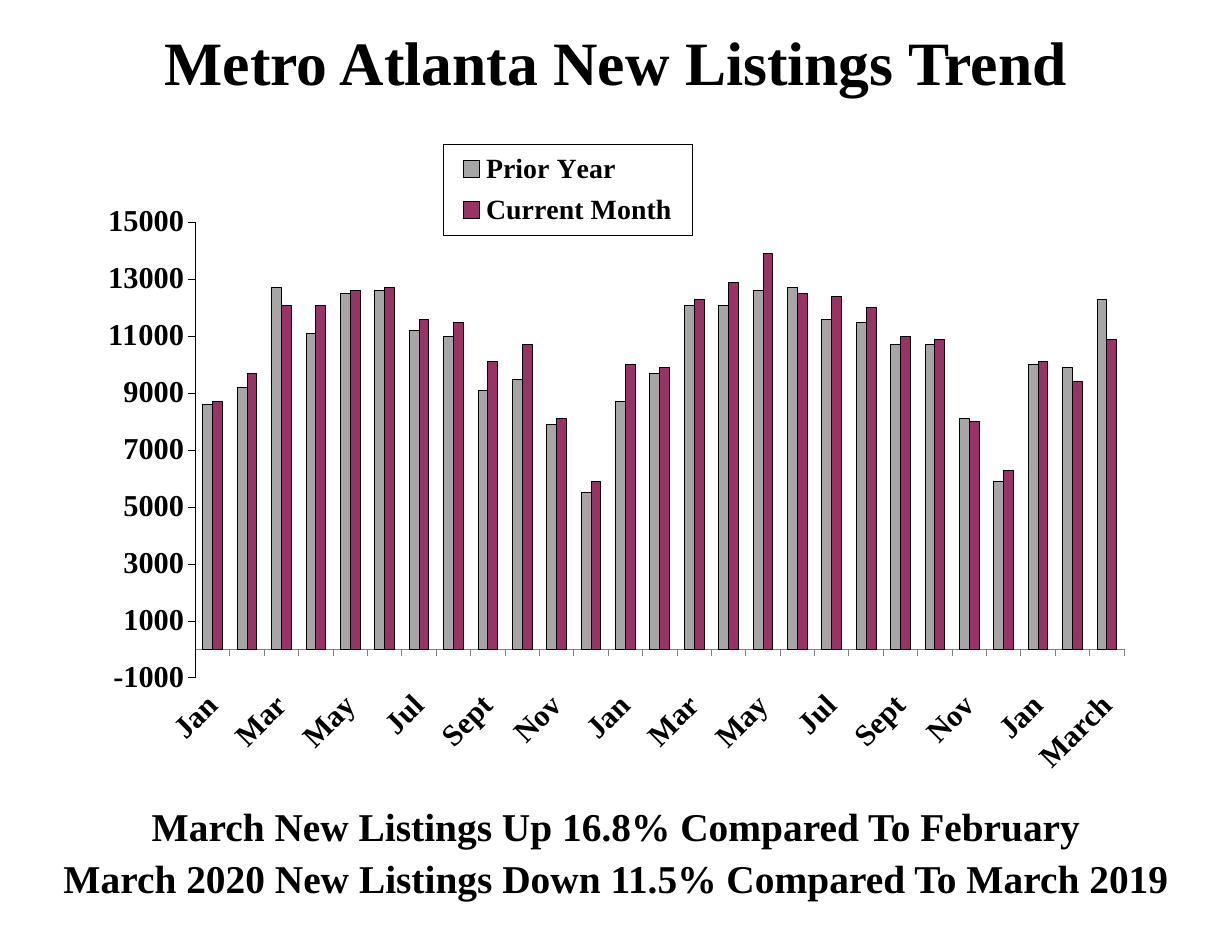
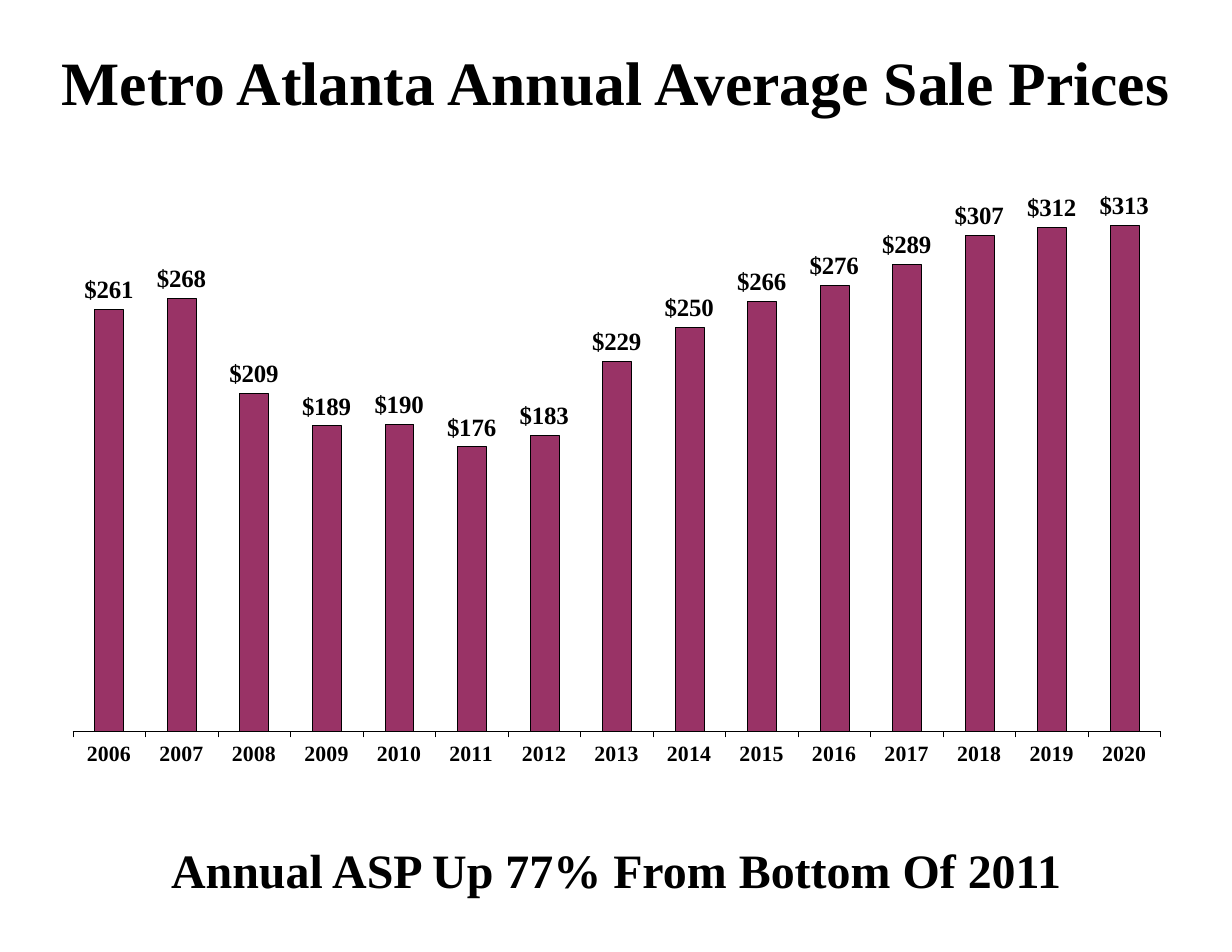
from dataclasses import dataclass
from typing import Any

import lxml.etree
import pptx
import pptx.chart.chart
import pptx.chart.data
import pptx.dml.color
import pptx.dml.line
import pptx.enum.chart
import pptx.enum.text
import pptx.oxml
import pptx.oxml.ns
import pptx.slide
import pptx.util

Cm = pptx.util.Cm
Pt = pptx.util.Pt
qn = pptx.oxml.ns.qn

BLACK = pptx.dml.color.RGBColor(0x00, 0x00, 0x00)
AXIS_GREY = pptx.dml.color.RGBColor(0x80, 0x80, 0x80)
PRIOR_GREY = pptx.dml.color.RGBColor(0xA6, 0xA6, 0xA6)
PLUM = pptx.dml.color.RGBColor(0x99, 0x33, 0x66)

FONT_FORMAT = {"name": "Times New Roman", "bold": True}
PAGE_WIDTH, PAGE_HEIGHT = 27.94, 21.59
TITLE_SIZE = 39.6

MONTHS = ["Jan", "Feb", "Mar", "Apr", "May", "Jun",
          "Jul", "Aug", "Sept", "Oct", "Nov", "Dec"]
LISTING_MONTHS = MONTHS * 2 + ["Jan", "Feb", "March"]
PRIOR_LISTINGS = [
    8600, 9200, 12700, 11100, 12500, 12600, 11200, 11000, 9100, 9500, 7900, 5500,
    8700, 9700, 12100, 12100, 12600, 12700, 11600, 11500, 10700, 10700, 8100, 5900,
    10000, 9900, 12300]
CURRENT_LISTINGS = [
    8700, 9700, 12100, 12100, 12600, 12700, 11600, 11500, 10100, 10700, 8100, 5900,
    10000, 9900, 12300, 12900, 13900, 12500, 12400, 12000, 11000, 10900, 8000, 6300,
    10100, 9400, 10900]
SALE_YEARS = [str(year) for year in range(2006, 2021)]
SALE_PRICES = [261, 268, 209, 189, 190, 176, 183, 229, 250, 266, 276, 289, 307, 312, 313]


@dataclass(frozen=True)
class Box:
    """Left, top, width and height in centimetres."""
    left: float
    top: float
    width: float
    height: float

    def lengths(self) -> list[pptx.util.Length]:
        return [Cm(side) for side in (self.left, self.top, self.width, self.height)]


@dataclass(frozen=True)
class Series:
    name: str
    values: list[int]
    color: pptx.dml.color.RGBColor


@dataclass(frozen=True)
class ColumnChart:
    box: Box
    plot_area: tuple[float, float, float, float]
    categories: list[str]
    series: list[Series]
    label_size: float
    axis_color: pptx.dml.color.RGBColor
    value_scale: dict[str, float]


@dataclass(frozen=True)
class Text:
    box: Box
    lines: list[str]
    size: float
    line_format: dict[str, Any]
    frame_format: dict[str, Any]


def apply_format(target: Any, *formats: dict[str, Any]) -> None:
    for values in formats:
        for attribute, value in values.items():
            setattr(target, attribute, value)


def style_font(font: Any, size: float) -> None:
    apply_format(font, FONT_FORMAT, {"size": Pt(size)})
    font.color.rgb = BLACK


def style_line(line: pptx.dml.line.LineFormat, color: pptx.dml.color.RGBColor) -> None:
    line.color.rgb = color
    line.width = Pt(0.03)


def title(text: str, top: float) -> Text:
    return Text(Box(0, top, PAGE_WIDTH, 1.17), [text], TITLE_SIZE, {},
                {"vertical_anchor": pptx.enum.text.MSO_ANCHOR.MIDDLE})


def caption(box: Box, lines: list[str], size: float) -> Text:
    return Text(box, lines, size, {"line_spacing": 0.9},
                {"margin_top": Cm(0.73), "margin_left": 0, "margin_right": 0})


def add_text(slide: pptx.slide.Slide, text: Text) -> None:
    frame = slide.shapes.add_textbox(*text.box.lengths()).text_frame
    apply_format(frame, {"word_wrap": True}, text.frame_format)
    for number, line in enumerate(text.lines):
        paragraph = frame.add_paragraph() if number else frame.paragraphs[0]
        apply_format(paragraph, {"alignment": pptx.enum.text.PP_ALIGN.CENTER},
                     text.line_format)
        if number:
            paragraph.space_before = Pt(6)
        run = paragraph.add_run()
        run.text = line
        style_font(run.font, text.size)


def manual_layout(fractions: tuple[float, ...], inner: bool = False) -> lxml.etree._Element:
    """Place a chart part by fractions of the chart: left, top, width, height."""
    layout = lxml.etree.Element(qn("c:layout"))
    manual = lxml.etree.SubElement(layout, qn("c:manualLayout"))
    settings = [("layoutTarget", "inner")] if inner else []
    settings += [("xMode", "edge"), ("yMode", "edge")]
    settings += zip("xywh", map(str, fractions))
    for tag, value in settings:
        lxml.etree.SubElement(manual, qn(f"c:{tag}"), val=value)
    return layout


def add_column_chart(slide: pptx.slide.Slide, spec_: ColumnChart) -> pptx.chart.chart.Chart:
    data = pptx.chart.data.CategoryChartData()
    data.categories = spec_.categories
    for series in spec_.series:
        data.add_series(series.name, series.values)
    chart = slide.shapes.add_chart(
        pptx.enum.chart.XL_CHART_TYPE.COLUMN_CLUSTERED, *spec_.box.lengths(), data).chart
    apply_format(chart, {"has_title": False, "has_legend": False})
    style_font(chart.font, spec_.label_size)

    plot = chart.plots[0]
    apply_format(plot, {"gap_width": 150, "overlap": 0, "vary_by_categories": False})
    for drawn, series in zip(plot.series, spec_.series):
        drawn.invert_if_negative = False
        drawn.format.fill.solid()
        drawn.format.fill.fore_color.rgb = series.color
        style_line(drawn.format.line, BLACK)

    months_or_years = chart.category_axis
    apply_format(months_or_years, {
        "major_tick_mark": pptx.enum.chart.XL_TICK_MARK.OUTSIDE,
        "tick_label_position": pptx.enum.chart.XL_TICK_LABEL_POSITION.LOW,
        "has_major_gridlines": False})
    style_font(months_or_years.tick_labels.font, spec_.label_size)
    style_line(months_or_years.format.line, spec_.axis_color)
    apply_format(chart.value_axis, {"has_major_gridlines": False}, spec_.value_scale)

    plot_area = chart._chartSpace.chart.plotArea
    for automatic in plot_area.findall(qn("c:layout")):
        plot_area.remove(automatic)
    plot_area.insert(0, manual_layout(spec_.plot_area, inner=True))
    return chart


def slant_alternate_labels(chart: pptx.chart.chart.Chart) -> None:
    axis = chart.category_axis._element
    axis.find(qn("c:txPr")).find(qn("a:bodyPr")).set("rot", "-2700000")
    skip = lxml.etree.Element(qn("c:tickLblSkip"), val="2")
    axis.find(qn("c:noMultiLvlLbl")).addprevious(skip)


def add_framed_legend(chart: pptx.chart.chart.Chart) -> None:
    chart.has_legend = True
    legend = chart.legend
    apply_format(legend, {"position": pptx.enum.chart.XL_LEGEND_POSITION.RIGHT,
                          "include_in_layout": False})
    style_font(legend.font, 17.9)
    element = legend._element
    for automatic in element.findall(qn("c:layout")):
        element.remove(automatic)
    element.find(qn("c:legendPos")).addnext(manual_layout((0.34, 0.02, 0.23, 0.14)))
    element.find(qn("c:overlay")).addnext(pptx.oxml.parse_xml(
        f'<c:spPr {pptx.oxml.ns.nsdecls("c", "a")}><a:ln w="3175"><a:solidFill>'
        f'<a:srgbClr val="{BLACK}"/></a:solidFill></a:ln></c:spPr>'))


def add_price_labels(chart: pptx.chart.chart.Chart) -> None:
    plot = chart.plots[0]
    plot.has_data_labels = True
    apply_format(plot.data_labels, {
        "show_value": True, "number_format": r"\$#,##0", "number_format_is_linked": False,
        "position": pptx.enum.chart.XL_LABEL_POSITION.OUTSIDE_END})
    style_font(plot.data_labels.font, 16)


def build_listings(slide: pptx.slide.Slide) -> None:
    add_text(slide, caption(
        Box(0, 17.58, PAGE_WIDTH, 1.63),
        ["March New Listings Up 16.8% Compared To February",
         "March 2020 New Listings Down 11.5% Compared To March 2019"], 25.3))
    chart = add_column_chart(slide, ColumnChart(
        Box(1.73, 2.97, 24.49, 14.76), (0.11, 0.14, 0.86, 0.7), LISTING_MONTHS,
        [Series("Prior Year", PRIOR_LISTINGS, PRIOR_GREY),
         Series("Current Month", CURRENT_LISTINGS, PLUM)],
        19.5, AXIS_GREY,
        {"minimum_scale": -1000, "maximum_scale": 15000, "major_unit": 2000,
         "major_tick_mark": pptx.enum.chart.XL_TICK_MARK.OUTSIDE}))
    style_font(chart.value_axis.tick_labels.font, 19.5)
    style_line(chart.value_axis.format.line, BLACK)
    slant_alternate_labels(chart)
    add_framed_legend(chart)
    add_text(slide, title("Metro Atlanta New Listings Trend", 0.79))


def build_sale_prices(slide: pptx.slide.Slide) -> None:
    add_text(slide, caption(Box(0.71, 18.49, 26.54, 1.63),
                            ["Annual ASP Up 77% From Bottom Of 2011"], 30.8))
    chart = add_column_chart(slide, ColumnChart(
        Box(1.4, 2.29, 24.92, 16.23), (0.01, 0.09, 0.99, 0.79), SALE_YEARS,
        [Series("Series 1", SALE_PRICES, PLUM)], 14, BLACK,
        {"minimum_scale": 0, "maximum_scale": 350, "visible": False}))
    add_price_labels(chart)
    add_text(slide, title("Metro Atlanta Annual Average Sale Prices", 1.24))


def main() -> None:
    deck = pptx.Presentation()
    apply_format(deck, {"slide_width": Cm(PAGE_WIDTH), "slide_height": Cm(PAGE_HEIGHT)})
    for build in (build_listings, build_sale_prices):
        build(deck.slides.add_slide(deck.slide_layouts[6]))
    deck.save("out.pptx")


if __name__ == "__main__":
    main()
